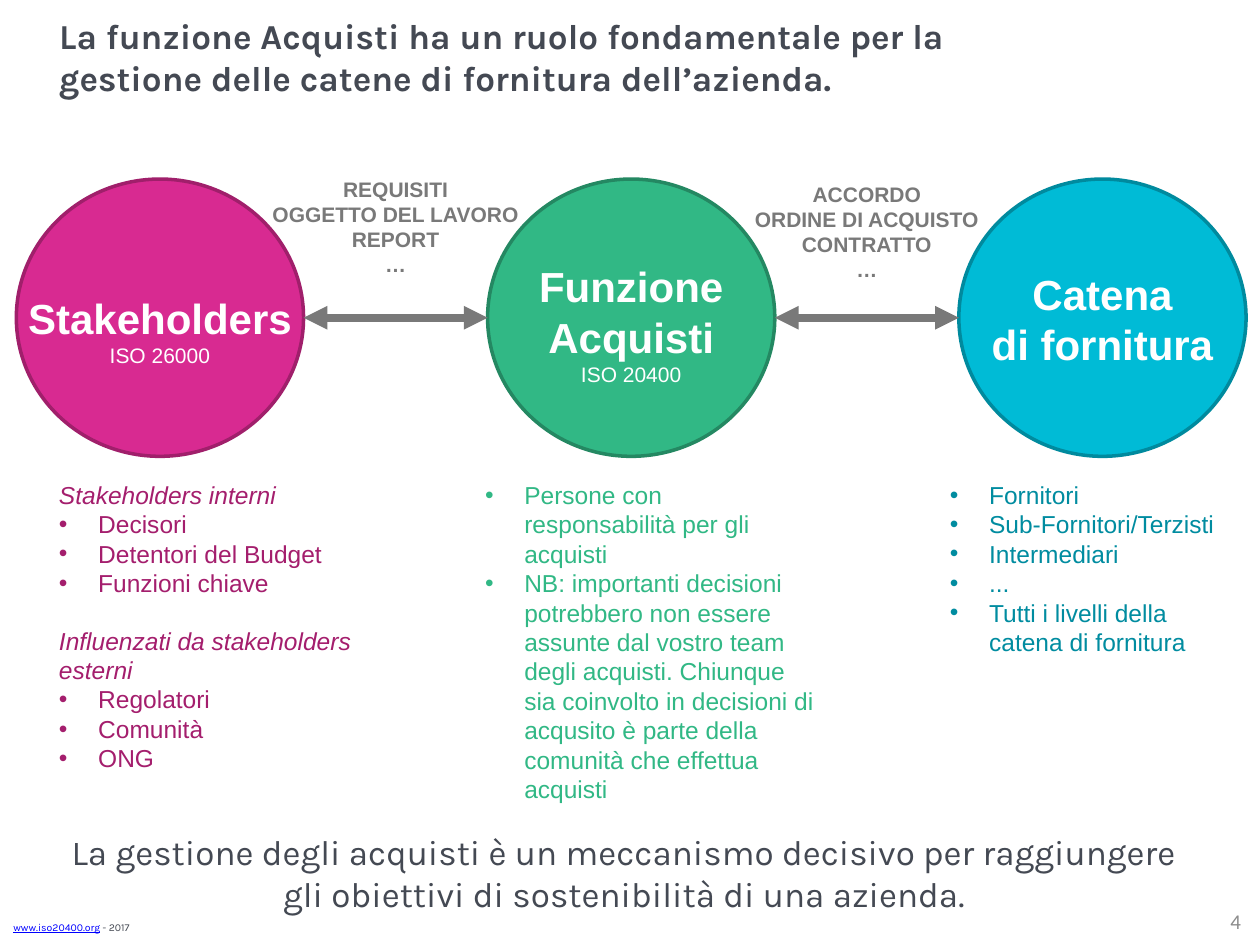
"""Build the slide on purchasing as the link between stakeholders and supply chain."""
from lxml.etree import SubElement
from pptx import Presentation
from pptx.dml.color import RGBColor as Rgb
from pptx.enum.shapes import MSO_CONNECTOR as Link, MSO_SHAPE as Shape
from pptx.enum.text import MSO_ANCHOR as Anchor, MSO_AUTO_SIZE as Fit, PP_ALIGN as Align
from pptx.oxml.ns import qn
from pptx.util import Cm, Pt

THEME = {
    "ink": "444953", "grey": "797979", "pale": "8C8C8C", "link": "0000FF", "white": "FFFFFF",
    "head": 20, "name": 24, "list": 14, "label": 12, "foot": 6,
    "sans": "Arial", "brand": "Karla", "page": "Calibri",
}
TITLE = "La funzione Acquisti ha un ruolo fondamentale per la gestione delle catene di fornitura dell’azienda."
CLOSE = ("La gestione degli acquisti è un meccanismo decisivo per raggiungere "
         "gli obiettivi di sostenibilità di una azienda.")
ROLES = [
    {"name": ["Stakeholders"], "norm": "ISO 26000", "top": 5.77,
     "fill": "D82A91", "edge": "A01F6B", "text": "A41E6D", "left": 0.94, "wide": 7.19,
     "groups": [
         ("Stakeholders interni", ["Decisori", "Detentori del Budget", "Funzioni chiave"]),
         ("Influenzati da stakeholders esterni", ["Regolatori", "Comunità", "ONG"])]},
    {"name": ["Funzione", "Acquisti"], "norm": "ISO 20400", "top": 5.13,
     "fill": "31B885", "edge": "248862", "text": "31B885", "left": 9.53, "wide": 7.19,
     "groups": [
         ("", ["Persone con responsabilità per gli acquisti",
               "NB: importanti decisioni potrebbero non essere assunte dal vostro team degli "
               "acquisti. Chiunque sia coinvolto in decisioni di acqusito è parte della "
               "comunità che effettua acquisti"])]},
    {"name": ["Catena", "di fornitura"], "norm": "", "top": 5.28,
     "fill": "00BBD6", "edge": "008A9E", "text": "008CA0", "left": 18.9, "wide": 6.25,
     "groups": [
         ("", ["Fornitori", "Sub-Fornitori/Terzisti", "Intermediari", "...",
               "Tutti i livelli della catena di fornitura"])]},
]
FLOWS = [
    (3.43, ["REQUISITI", "OGGETTO DEL LAVORO", "REPORT", "…"]),
    (3.53, ["ACCORDO", "ORDINE DI ACQUISTO", "CONTRATTO", "…"]),
]
LEFT, STEP, TOP, WIDE, HIGH = 0.33, 9.5, 3.61, 5.79, 5.59
NAME_W, FLOW_W, LIST_TOP = 5.89, 7.19, 9.55


def style(run, size, tone, face="sans", **more):
    values = {"size": Pt(THEME[size]), "name": THEME[face], "bold": False, **more}
    for key, value in values.items():
        setattr(run.font, key, value)
    run.font.color.rgb = Rgb.from_string(THEME.get(tone, tone))


def add_box(slide, left, top, wide, high):
    frame = slide.shapes.add_textbox(Cm(left), Cm(top), Cm(wide), Cm(high)).text_frame
    frame.word_wrap = True
    return frame


def add_line(frame, text, size, tone, align=Align.LEFT, **more):
    first = frame.paragraphs[0]
    para = frame.add_paragraph() if first.runs else first
    para.alignment = align
    para.text = text
    for run in para.runs:
        style(run, size, tone, **more)
    return para


def add_bullet(para):
    props = para._p.get_or_add_pPr()
    props.set("marL", str(Cm(0.79)))
    props.set("indent", str(-Cm(0.79)))
    SubElement(props, qn("a:buFont"), typeface="Arial")
    SubElement(props, qn("a:buChar"), char="•")


def add_role(slide, role, left):
    disc = slide.shapes.add_shape(Shape.OVAL, Cm(left), Cm(TOP), Cm(WIDE), Cm(HIGH))
    disc.shadow.inherit = False
    disc.fill.solid()
    disc.fill.fore_color.rgb = Rgb.from_string(role["fill"])
    disc.line.color.rgb = Rgb.from_string(role["edge"])
    disc.line.width = Pt(2)

    frame = add_box(slide, left + (WIDE - NAME_W) / 2, role["top"], NAME_W, 2.3)
    for part in role["name"]:
        add_line(frame, part, "name", "white", Align.CENTER, bold=True)
    if role["norm"]:
        add_line(frame, role["norm"], "label", "white", Align.CENTER)

    frame = add_box(slide, role["left"], LIST_TOP, role["wide"], 6.5)
    for rank, (head, items) in enumerate(role["groups"]):
        if head:
            para = add_line(frame, head, "list", role["text"], italic=True)
            if rank:
                para.space_before = Pt(16)
        for item in items:
            add_bullet(add_line(frame, item, "list", role["text"]))


def add_flow(slide, top, lines, start):
    end = start + STEP - WIDE
    mid = Cm(TOP + HIGH / 2)
    arrow = slide.shapes.add_connector(Link.STRAIGHT, Cm(start), mid, Cm(end), mid)
    arrow.line.color.rgb = Rgb.from_string(THEME["grey"])
    arrow.line.width = Pt(4.5)
    stroke = arrow.line._get_or_add_ln()
    for tip in ("a:headEnd", "a:tailEnd"):
        SubElement(stroke, qn(tip), type="triangle")
    SubElement(arrow._element.spPr, qn("a:effectLst"))
    frame = add_box(slide, (start + end - FLOW_W) / 2, top, FLOW_W, 2.31)
    add_line(frame, "\v".join(lines), "label", "grey", Align.CENTER, bold=True)


def main():
    deck = Presentation()
    deck.slide_width, deck.slide_height = Cm(25.4), Cm(19.05)
    slide = deck.slides.add_slide(deck.slide_layouts[5])

    title = slide.shapes.title
    area = {"left": 0.94, "top": 0.18, "width": 19.61, "height": 1.9}
    for key, value in area.items():
        setattr(title, key, Cm(value))
    frame = title.text_frame
    frame.auto_size, frame.vertical_anchor = Fit.NONE, Anchor.MIDDLE
    add_line(frame, TITLE, "head", "ink", face="brand", bold=True)

    for spot, role in enumerate(ROLES):
        add_role(slide, role, LEFT + spot * STEP)
    for spot, (top, lines) in enumerate(FLOWS):
        add_flow(slide, top, lines, LEFT + WIDE + spot * STEP)

    frame = add_box(slide, 0.89, 16.61, 23.39, 1.96)
    add_line(frame, CLOSE, "head", "ink", Align.CENTER, face="brand")

    frame = add_box(slide, 0.02, 18.44, 16.43, 0.5)
    para = add_line(frame, "www.iso20400.org", "foot", "link", face="brand", underline=True)
    year = para.add_run()
    year.text = " - 2017"
    style(year, "foot", "ink", "brand")

    frame = add_box(slide, 19.35, 18.08, 5.92, 0.97)
    frame.vertical_anchor = Anchor.MIDDLE
    add_line(frame, "4", "label", "pale", Align.RIGHT, face="page")
    deck.save("out.pptx")


if __name__ == "__main__":
    main()
